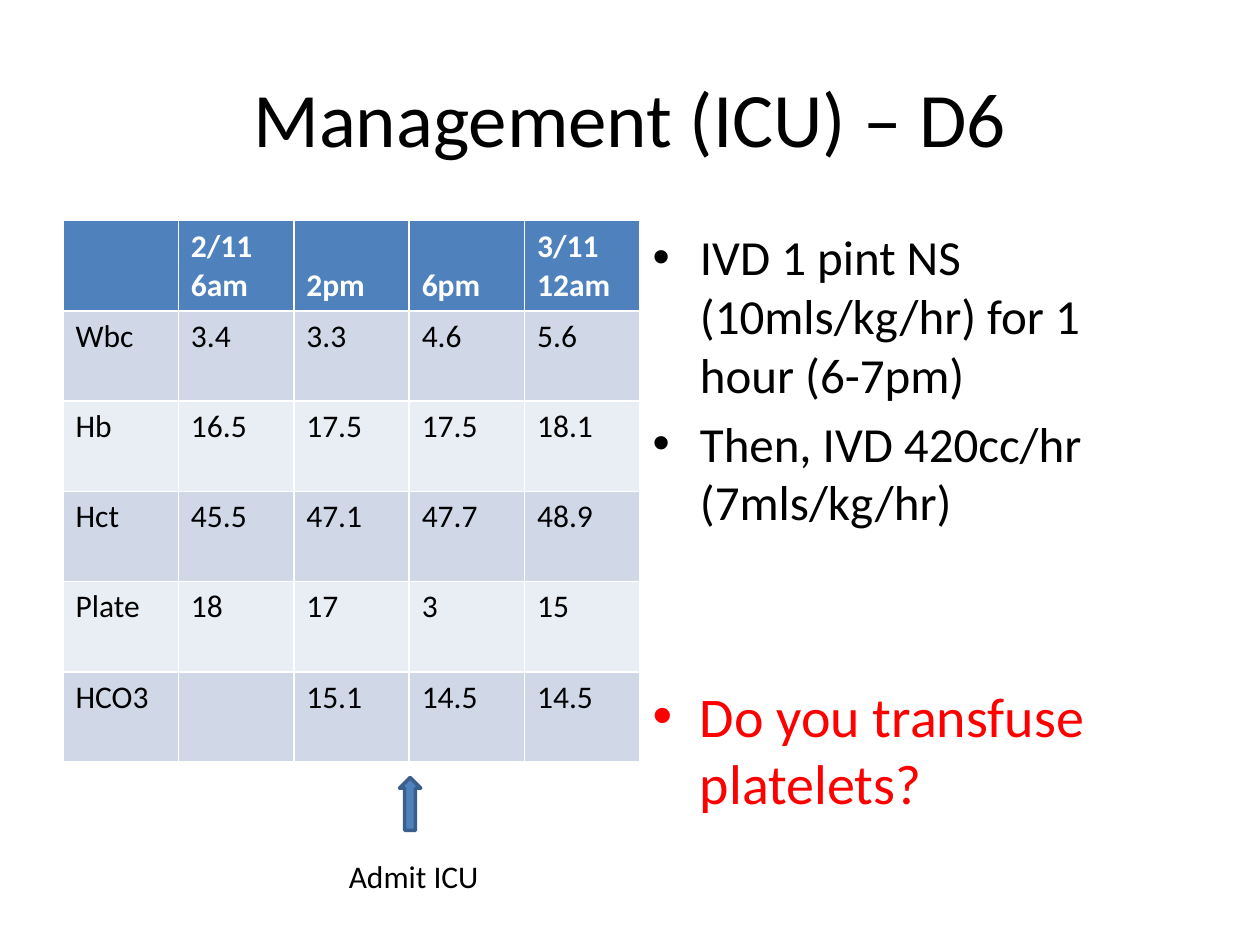
"""Build the ICU management slide with blood results and fluid orders."""
from pptx import Presentation
from pptx.dml.color import RGBColor
from pptx.enum.shapes import MSO_SHAPE
from pptx.enum.text import MSO_ANCHOR
from pptx.util import Inches, Pt

TITLE = "Management (ICU) – D6"
RESULTS = [
    ["", "2/11 6am", "2pm", "6pm", "3/11\n12am"],
    ["Wbc", "3.4", "3.3", "4.6", "5.6"],
    ["Hb", "16.5", "17.5", "17.5", "18.1"],
    ["Hct", "45.5", "47.1", "47.7", "48.9"],
    ["Plate", "18", "17", "3", "15"],
    ["HCO3", "", "15.1", "14.5", "14.5"],
]
ORDERS = [
    ("IVD 1 pint NS (10mls/kg/hr) for 1 hour (6-7pm)", 28, "text"),
    ("Then, IVD 420cc/hr (7mls/kg/hr)", 28, "text"),
    ("Do you transfuse platelets?", 32, "question"),
]
ADMISSION = "Admit ICU"
QUESTION_GAP = Pt(86)
COLORS = {
    "text": "000000",
    "question": "FF0000",
    "header": "4F81BD",
    "header_text": "FFFFFF",
    "odd_row": "D0D8E8",
    "even_row": "E9EDF4",
    "arrow_line": "3A5F8C",
}
MARGIN, CONTENT_TOP = 0.5, 1.75
TABLE_WIDTH, TABLE_HEIGHT = 4.58, 4.3


def color(name):
    return RGBColor.from_string(COLORS[name])


def place(part, left, top, width, height):
    part.left, part.top = Inches(left), Inches(top)
    part.width, part.height = Inches(width), Inches(height)


def style(paragraph, size, color_name, bold=False):
    for run in paragraph.runs:
        run.font.name = "Calibri"
        run.font.size = Pt(size)
        run.font.bold = bold
        run.font.color.rgb = color(color_name)


def add_results(slide):
    box = [Inches(n) for n in (MARGIN, CONTENT_TOP, TABLE_WIDTH, TABLE_HEIGHT)]
    results = slide.shapes.add_table(len(RESULTS), len(RESULTS[0]), *box).table
    for row, values in enumerate(RESULTS):
        is_header = row == 0
        fill = "header" if is_header else "odd_row" if row % 2 else "even_row"
        for column, value in enumerate(values):
            cell = results.cell(row, column)
            cell.text_frame.text = value
            cell.vertical_anchor = MSO_ANCHOR.BOTTOM if is_header else MSO_ANCHOR.TOP
            cell.fill.solid()
            cell.fill.fore_color.rgb = color(fill)
            for paragraph in cell.text_frame.paragraphs:
                style(paragraph, 18, "header_text" if is_header else "text", is_header)


def add_orders(body):
    left = MARGIN + TABLE_WIDTH
    place(body, left, CONTENT_TOP, 10 - MARGIN - left, 4.95)
    body.text_frame.text = "\n".join(text for text, _, _ in ORDERS)
    for paragraph, (_, size, color_name) in zip(body.text_frame.paragraphs, ORDERS):
        style(paragraph, size, color_name)
    body.text_frame.paragraphs[-1].space_before = QUESTION_GAP


def add_admission(slide):
    label = slide.shapes.add_textbox(Inches(2.67), Inches(6.75), Inches(1.83), Inches(0.4))
    label.text_frame.word_wrap = True
    label.text_frame.text = ADMISSION
    style(label.text_frame.paragraphs[0], 18, "text")

    arrow = slide.shapes.add_shape(
        MSO_SHAPE.UP_ARROW, Inches(3.17), Inches(6.17), Inches(0.17), Inches(0.42)
    )
    arrow.shadow.inherit = False
    arrow.fill.solid()
    arrow.fill.fore_color.rgb = color("header")
    arrow.line.color.rgb = color("arrow_line")
    arrow.line.width = Pt(2)


def main():
    deck = Presentation()
    deck.slide_width, deck.slide_height = Inches(10), Inches(7.5)
    slide = deck.slides.add_slide(deck.slide_layouts[1])
    title = slide.shapes.title
    place(title, MARGIN, 0.3, 10 - 2 * MARGIN, 1.25)
    title.text_frame.text = TITLE
    style(title.text_frame.paragraphs[0], 44, "text")
    add_results(slide)
    add_orders(slide.placeholders[1])
    add_admission(slide)
    deck.save("out.pptx")


if __name__ == "__main__":
    main()
